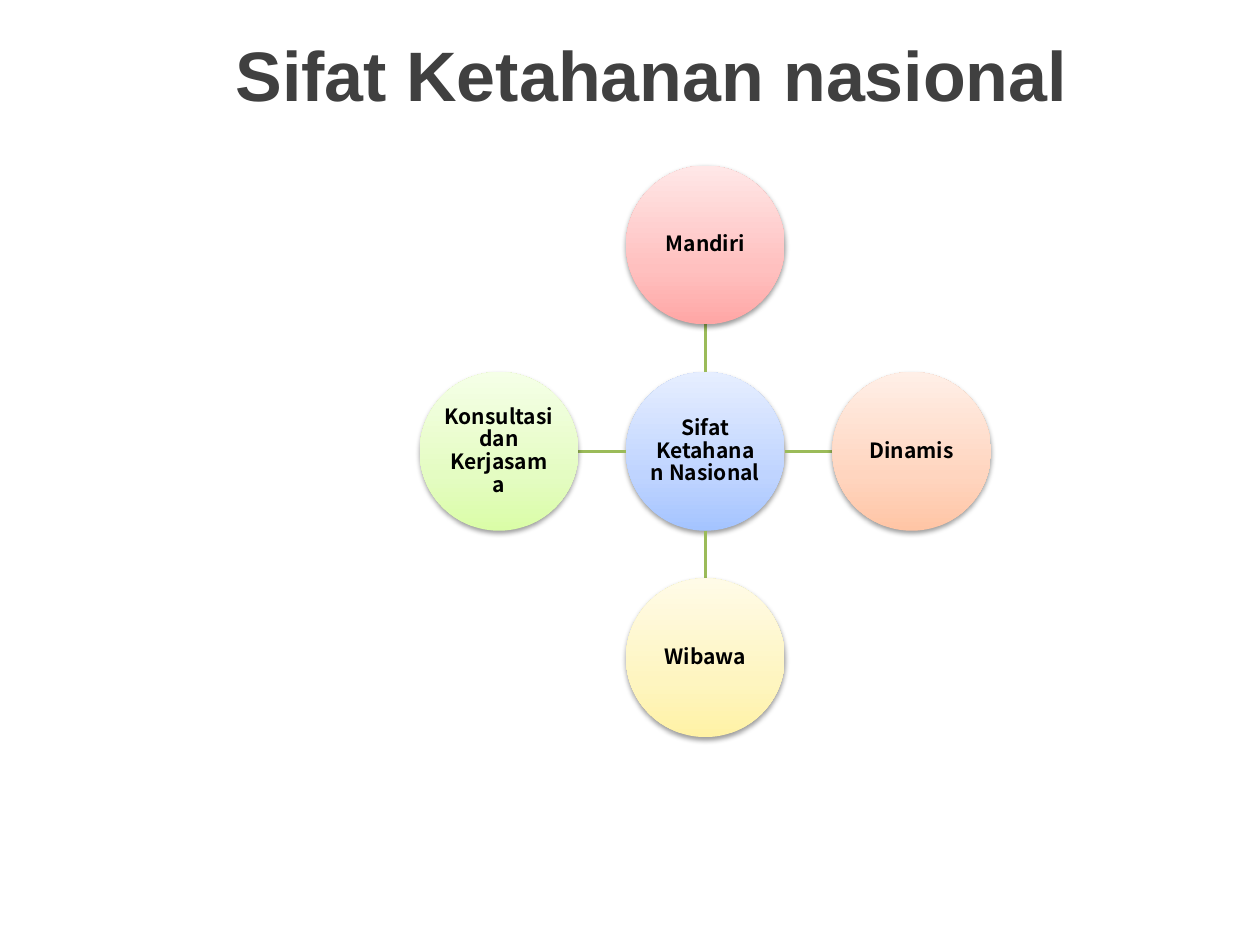
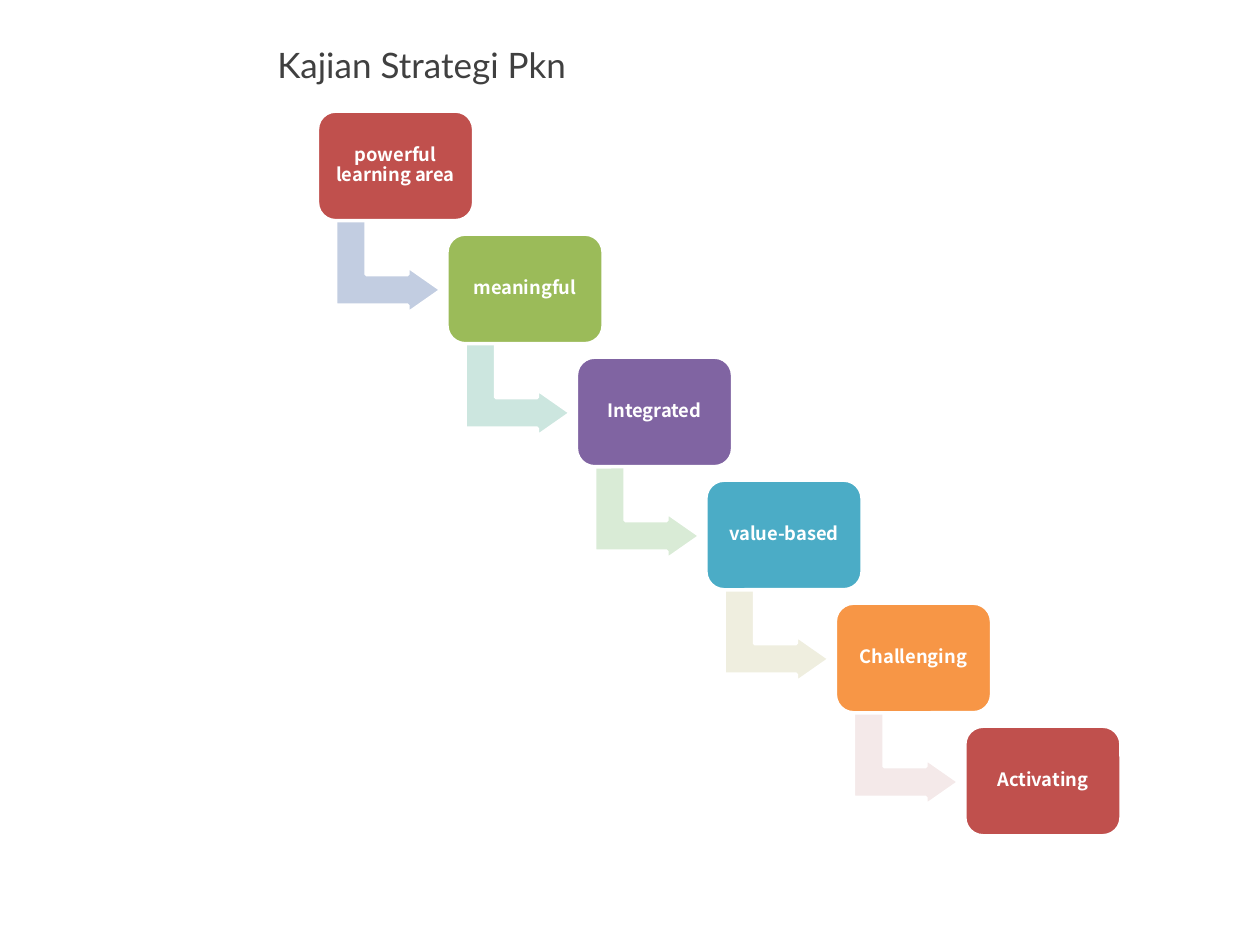
from copy import deepcopy

from lxml import etree
from pptx import Presentation
from pptx.dml.color import RGBColor
from pptx.enum.shapes import MSO_CONNECTOR as CONN, MSO_SHAPE as SHAPE
from pptx.enum.text import MSO_ANCHOR as ANCHOR, MSO_AUTO_SIZE as AUTO, PP_ALIGN as ALIGN
from pptx.oxml import parse_xml
from pptx.oxml.ns import nsdecls, qn
from pptx.util import Cm, Pt

DARK, BLACK, WHITE = "404040", "000000", "FFFFFF"
RED, GREEN, PURPLE, TEAL, ORANGE = "C0504D", "9BBB59", "8064A2", "4BACC6", "F79646"
LABEL_FONT = "Noto Sans CJK KR"
SHADOW = (
    f'<a:outerShdw {nsdecls("a")} blurRad="39370" dist="20320" dir="5400000" rotWithShape="0">'
    '<a:srgbClr val="000000"><a:alpha val="38000"/></a:srgbClr></a:outerShdw>'
)


def rgb(value):
    return RGBColor.from_string(value)


def write(tf, text, size, color, font=LABEL_FONT, bold=False, align=ALIGN.CENTER,
          anchor=ANCHOR.MIDDLE, spacing=None, inset=(0.25, 0.13, 0.25, 0.13)):
    tf.word_wrap = True
    tf.auto_size = AUTO.NONE
    tf.vertical_anchor = anchor
    tf.margin_left, tf.margin_top, tf.margin_right, tf.margin_bottom = map(Cm, inset)
    p = tf.paragraphs[0]
    p.alignment = align
    p.line_spacing = spacing
    r = p.add_run()
    r.text = text
    r.font.name, r.font.size, r.font.bold = font, Pt(size), bold
    r.font.color.rgb = rgb(color)


class Deck:
    """Holds the presentation style and the current slide."""

    def __init__(self):
        self.prs = Presentation()
        self.prs.slide_width, self.prs.slide_height = Cm(25.4), Cm(19.05)
        self.s = None

    def slide(self, title, box, size, **style):
        self.s = self.prs.slides.add_slide(self.prs.slide_layouts[5])
        sp = self.s.shapes.title
        sp.left, sp.top, sp.width, sp.height = map(Cm, box)
        write(sp.text_frame, title, size, DARK, align=ALIGN.LEFT, **style)

    def shape(self, kind, x, y, w, h):
        sp = self.s.shapes.add_shape(kind, Cm(x), Cm(y), Cm(w), Cm(h))
        sp.shadow.inherit = False
        return sp

    def block(self, kind, x, y, w, h, fill, adjustments):
        sp = self.shape(kind, x, y, w, h)
        sp.fill.solid()
        sp.fill.fore_color.rgb = rgb(fill)
        sp.line.color.rgb = rgb(WHITE)
        sp.line.width = Pt(2)
        for i, value in enumerate(adjustments):
            sp.adjustments[i] = value
        return sp

    def circle(self, text, cx, cy, d, colors):
        sp = self.shape(SHAPE.OVAL, cx - d / 2, cy - d / 2, d, d)
        sp.line.fill.background()
        sp.fill.gradient()
        sp.fill.gradient_angle = 90
        props = sp._element.spPr
        stops = props.find(qn("a:gradFill")).find(qn("a:gsLst"))
        stops.append(deepcopy(stops[-1]))
        for stop, position, color in zip(sp.fill.gradient_stops, (0, 0.35, 1), colors):
            stop.position = position
            stop.color.rgb = rgb(color)
        props.find(qn("a:effectLst")).append(parse_xml(SHADOW))
        write(sp.text_frame, text, 12, BLACK, bold=True, spacing=0.9, inset=[0.03] * 4)

    def link(self, x1, y1, x2, y2):
        line = self.s.shapes.add_connector(CONN.STRAIGHT, Cm(x1), Cm(y1), Cm(x2), Cm(y2))
        line.line.color.rgb = rgb(GREEN)
        line.line.width = Pt(2)
        etree.SubElement(line._element.spPr, qn("a:effectLst"))

    def step(self, text, x, y, fill, arrow_fill):
        if arrow_fill:
            arrow = self.block(SHAPE.BENT_UP_ARROW, x + 0.49, y + 2.07, 1.88, 2.13,
                               arrow_fill, (0.328, 0.25, 0.358))
            arrow.rotation = 90
        sp = self.block(SHAPE.ROUNDED_RECTANGLE, x, y, 3.15, 2.21, fill, (0.167,))
        write(sp.text_frame, text, 10.5, WHITE, bold=True, spacing=0.9, inset=[0.13] * 4)


def traits(deck):
    deck.slide("Sifat Ketahanan nasional", (4.5, 0, 20.9, 2.97), 40, font="Arial", bold=True)
    cx, cy, diameter, distance = 14.22, 9.1, 3.2, 4.16
    near, far = diameter / 2, distance - diameter / 2
    deck.circle("Sifat Ketahanan Nasional", cx, cy, diameter, ("A4C4FF", "BFD4FF", "E6EEFF"))
    satellites = [
        ("Mandiri", 0, -1, ("FFA6A5", "FFC0BF", "FFE7E7")),
        ("Dinamis", 1, 0, ("FFC5A5", "FFD5BF", "FFEFE7")),
        ("Wibawa", 0, 1, ("FFF2A5", "FEF5C0", "FFFBE7")),
        ("Konsultasi dan Kerjasama", -1, 0, ("DAFDA7", "E4FCC2", "F5FFE7")),
    ]
    for text, dx, dy, colors in satellites:
        deck.link(cx + dx * near, cy + dy * near, cx + dx * far, cy + dy * far)
        deck.circle(text, cx + dx * distance, cy + dy * distance, diameter, colors)


def strategies(deck):
    deck.slide("Kajian Strategi Pkn", (4.5, 0.74, 19.66, 15.93), 20, font="Lato",
               anchor=ANCHOR.TOP, inset=(1.09, 0.13, 0.25, 0.13))
    steps = [
        ("powerful learning area", RED, "C2CDE1"),
        ("meaningful", GREEN, "CCE6DF"),
        ("Integrated", PURPLE, "D9EBD6"),
        ("value-based", TEAL, "EFEEDF"),
        ("Challenging", ORANGE, "F4E9E9"),
        ("Activating", RED, None),
    ]
    for i, (text, fill, arrow_fill) in enumerate(steps):
        deck.step(text, 6.4 + 2.61 * i, 2.24 + 2.48 * i, fill, arrow_fill)


def main():
    deck = Deck()
    traits(deck)
    strategies(deck)
    deck.prs.save("out.pptx")


if __name__ == "__main__":
    main()
